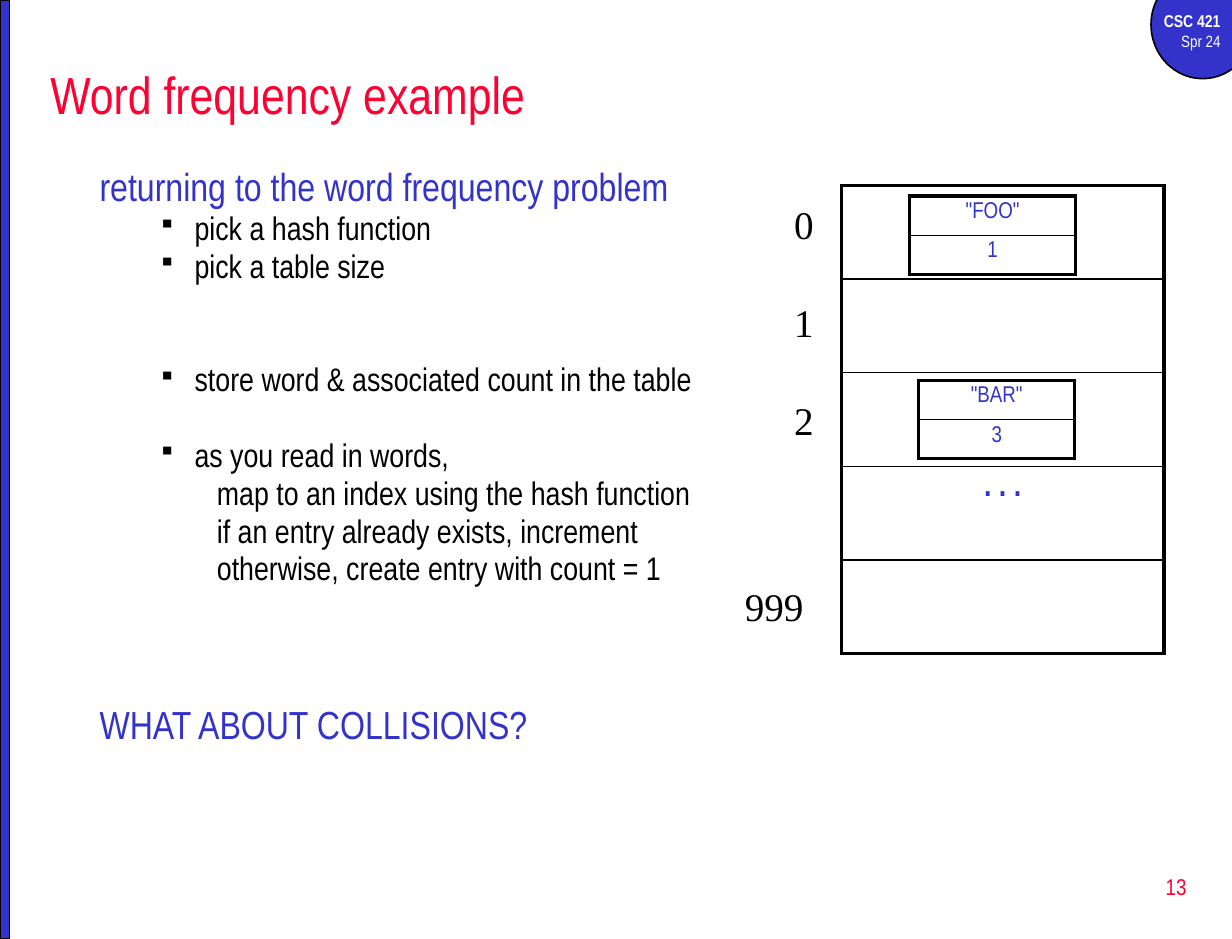
from dataclasses import dataclass

from lxml.etree import SubElement
from pptx import Presentation
from pptx.dml.color import RGBColor
from pptx.enum.shapes import MSO_SHAPE as Preset
from pptx.enum.text import MSO_ANCHOR as Anchor, PP_ALIGN as Align
from pptx.oxml.ns import qn
from pptx.util import Inches, Pt


@dataclass(frozen=True)
class Theme:
    sans: str = "Arial Narrow"
    serif: str = "Times New Roman"
    blue: str = "3333CC"
    red: str = "FF0033"
    black: str = "000000"
    white: str = "FFFFFF"
    title: float = 32
    heading: float = 24
    body: float = 20
    small: float = 14
    course: float = 10.5
    term: float = 10
    thick: float = 2.25
    thin: float = 1


THEME = Theme()


@dataclass(frozen=True)
class Box:
    left: float
    top: float
    width: float
    height: float

    def lengths(self) -> list:
        return [Inches(n) for n in (self.left, self.top, self.width, self.height)]


@dataclass(frozen=True)
class Step:
    text: str
    bulleted: bool = True
    gap: float = 4


@dataclass(frozen=True)
class Entry:
    box: Box
    word: str
    count: str


@dataclass(frozen=True)
class SlotLabel:
    text: str
    box: Box


STEPS = [
    Step("pick a hash function"),
    Step("pick a table size"),
    Step("store word & associated count in the table", gap=50.4),
    Step("as you read in words,", gap=27.2),
    Step("map to an index using the hash function", bulleted=False),
    Step("if an entry already exists, increment", bulleted=False),
    Step("otherwise, create entry with count = 1", bulleted=False),
]
ENTRIES = [
    Entry(Box(7.75, 1.67, 1.42, 0.67), '"FOO"', "1"),
    Entry(Box(7.83, 3.24, 1.33, 0.67), '"BAR"', "3"),
]
SLOT_LABELS = [
    SlotLabel(str(slot), Box(6.67, 1.66 + slot * 0.835, 0.42, 0.5)) for slot in range(3)
] + [SlotLabel("999", Box(6.25, 4.91, 0.83, 0.5))]


def write(paragraph, text: str, *, size: float, color: str, font: str = THEME.sans,
          bold: bool = False, align=Align.LEFT, before: float = 0, spacing: float = 1) -> None:
    paragraph.alignment = align
    paragraph.space_before = Pt(before)
    paragraph.line_spacing = spacing
    run = paragraph.add_run()
    run.text = text
    run.font.size = Pt(size)
    run.font.name = font
    run.font.bold = bold
    run.font.color.rgb = RGBColor.from_string(color)


def add_frame(slide, box: Box, anchor=Anchor.TOP):
    frame = slide.shapes.add_textbox(*box.lengths()).text_frame
    frame.word_wrap = True
    frame.vertical_anchor = anchor
    return frame


def add_label(slide, box: Box, text: str, anchor=Anchor.TOP, **style) -> None:
    write(add_frame(slide, box, anchor).paragraphs[0], text, **style)


def add_badge(slide, preset, box: Box) -> None:
    badge = slide.shapes.add_shape(preset, *box.lengths())
    badge.shadow.inherit = False
    badge.fill.solid()
    badge.fill.fore_color.rgb = RGBColor.from_string(THEME.blue)
    badge.line.color.rgb = RGBColor.from_string(THEME.black)
    badge.line.width = Pt(THEME.thin)


def indent(paragraph, step: Step) -> None:
    props = paragraph._p.get_or_add_pPr()
    left, hang = (0.81, -0.31) if step.bulleted else (1, 0)
    props.set("marL", str(Inches(left)))
    props.set("indent", str(Inches(hang)))
    if step.bulleted:
        SubElement(props, qn("a:buSzPct"), val="75000")
        SubElement(props, qn("a:buChar"), char="▪")
    else:
        SubElement(props, qn("a:buNone"))


def border(cell, side: str, width: float) -> None:
    edge = SubElement(cell._tc.get_or_add_tcPr(), qn(f"a:ln{side}"), w=str(Pt(width)))
    SubElement(SubElement(edge, qn("a:solidFill")), qn("a:srgbClr"), val=THEME.black)


def add_stack(slide, box: Box, texts: list[str], **style) -> None:
    stack = slide.shapes.add_table(len(texts), 1, *box.lengths()).table
    stack.first_row = stack.horz_banding = False
    last = len(texts) - 1
    for index, text in enumerate(texts):
        stack.rows[index].height = Inches(box.height / len(texts))
        cell = stack.cell(index, 0)
        cell.margin_top = Inches(0.05)
        cell.margin_bottom = 0
        border(cell, "L", THEME.thick)
        border(cell, "R", THEME.thick)
        border(cell, "T", THEME.thick if index == 0 else THEME.thin)
        border(cell, "B", THEME.thick if index == last else THEME.thin)
        cell.fill.background()
        if text:
            write(cell.text_frame.paragraphs[0], text, color=THEME.blue,
                  align=Align.CENTER, **style)


def add_master_parts(slide) -> None:
    add_badge(slide, Preset.OVAL, Box(9.81, -0.25, 0.88, 0.92))
    course = add_frame(slide, Box(9.67, 0.04, 0.83, 0.46))
    write(course.paragraphs[0], "CSC 421", size=THEME.course, color=THEME.white,
          bold=True, align=Align.RIGHT)
    write(course.add_paragraph(), "Spr 24", size=THEME.term, color=THEME.white,
          align=Align.RIGHT)
    add_badge(slide, Preset.RECTANGLE, Box(0, 0, 0.08, 8))
    add_label(slide, Box(8.02, 7.29, 2.19, 0.53), "13", Anchor.MIDDLE,
              size=THEME.small, color=THEME.red, align=Align.RIGHT)


def add_outline(slide) -> None:
    outline = add_frame(slide, Box(0.75, 1.33, 5.42, 5.08))
    write(outline.paragraphs[0], "returning to the word frequency problem",
          size=THEME.heading, color=THEME.blue)
    for step in STEPS:
        paragraph = outline.add_paragraph()
        write(paragraph, step.text, size=THEME.body, color=THEME.black,
              before=step.gap, spacing=0.8)
        indent(paragraph, step)


def add_hash_table(slide) -> None:
    add_stack(slide, Box(7.17, 1.58, 2.75, 3.99), ["", "", "", ". . .", ""],
              size=THEME.body, bold=True)
    for entry in ENTRIES:
        add_stack(slide, entry.box, [entry.word, entry.count], size=THEME.small)
    for label in SLOT_LABELS:
        add_label(slide, label.box, label.text, size=THEME.heading,
                  color=THEME.black, font=THEME.serif)


def main() -> None:
    deck = Presentation()
    deck.slide_width, deck.slide_height = Inches(10.5), Inches(8)
    slide = deck.slides.add_slide(deck.slide_layouts[6])
    add_master_parts(slide)
    add_label(slide, Box(0.33, 0.42, 9.92, 0.75), "Word frequency example", Anchor.MIDDLE,
              size=THEME.title, color=THEME.red)
    add_outline(slide)
    add_hash_table(slide)
    add_label(slide, Box(0.75, 5.92, 5.42, 1), "WHAT ABOUT COLLISIONS?",
              size=THEME.heading, color=THEME.blue)
    deck.save("out.pptx")


if __name__ == "__main__":
    main()
